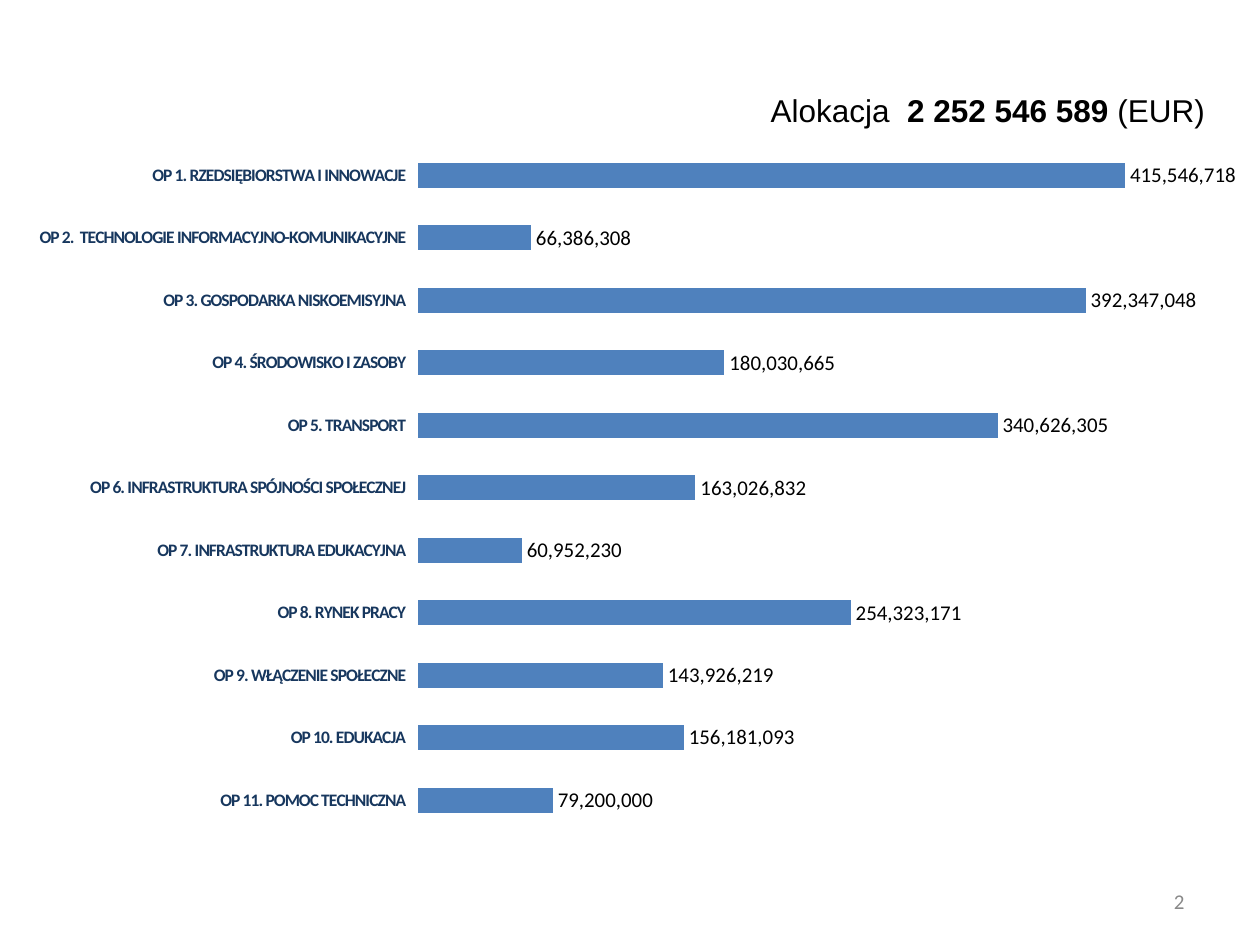
"""Build a slide with a bar chart of the allocation per priority axis."""
from typing import NamedTuple

from pptx import Presentation
from pptx.chart.data import CategoryChartData
from pptx.dml.color import RGBColor
from pptx.enum.chart import XL_CHART_TYPE, XL_LABEL_POSITION, XL_TICK_MARK
from pptx.enum.text import MSO_ANCHOR, PP_ALIGN
from pptx.oxml import parse_xml
from pptx.oxml.ns import nsdecls
from pptx.util import Inches, Pt

BLACK = RGBColor(0x00, 0x00, 0x00)
NAVY = RGBColor(0x17, 0x37, 0x5E)
BLUE = RGBColor(0x4F, 0x81, 0xBD)
GREY = RGBColor(0x89, 0x89, 0x89)


class Allocation(NamedTuple):
    priority: str
    euros: int


class Piece(NamedTuple):
    words: str
    bold: bool = False


class Caption(NamedTuple):
    left: float
    top: float
    width: float
    height: float
    pieces: list[Piece]
    font: str
    size: int
    color: RGBColor
    anchor: MSO_ANCHOR


ALLOCATIONS = [
    Allocation("OP 1. RZEDSIĘBIORSTWA I INNOWACJE", 415546718),
    Allocation("OP 2.  TECHNOLOGIE INFORMACYJNO-KOMUNIKACYJNE", 66386308),
    Allocation("OP 3. GOSPODARKA NISKOEMISYJNA", 392347048),
    Allocation("OP 4. ŚRODOWISKO I ZASOBY", 180030665),
    Allocation("OP 5. TRANSPORT", 340626305),
    Allocation("OP 6. INFRASTRUKTURA SPÓJNOŚCI SPOŁECZNEJ", 163026832),
    Allocation("OP 7. INFRASTRUKTURA EDUKACYJNA", 60952230),
    Allocation("OP 8. RYNEK PRACY", 254323171),
    Allocation("OP 9. WŁĄCZENIE SPOŁECZNE", 143926219),
    Allocation("OP 10. EDUKACJA", 156181093),
    Allocation("OP 11. POMOC TECHNICZNA", 79200000),
]
TOTAL = Caption(
    5.87, 0.67, 3.86, 0.4,
    [Piece("Alokacja  "), Piece("2 252 546 589 ", True), Piece("(EUR) ")],
    "Arial", 18, BLACK, MSO_ANCHOR.TOP,
)
PAGE_NUMBER = Caption(
    7.17, 6.95, 2.33, 0.4, [Piece("2")], "Calibri", 12, GREY, MSO_ANCHOR.MIDDLE
)


def style_font(font, size: int, color: RGBColor, name: str, bold: bool = False) -> None:
    font.size = Pt(size)
    font.name = name
    font.bold = bold
    font.color.rgb = color


def add_caption(slide, caption: Caption) -> None:
    box = slide.shapes.add_textbox(
        Inches(caption.left), Inches(caption.top),
        Inches(caption.width), Inches(caption.height),
    )
    frame = box.text_frame
    frame.word_wrap = True
    frame.vertical_anchor = caption.anchor
    paragraph = frame.paragraphs[0]
    paragraph.alignment = PP_ALIGN.RIGHT
    for piece in caption.pieces:
        run = paragraph.add_run()
        run.text = piece.words
        style_font(run.font, caption.size, caption.color, caption.font, piece.bold)


def place_plot(chart, left: float, top: float, width: float, height: float) -> None:
    plot_area = chart.plots[0]._element.getparent()
    for layout in plot_area.xpath("c:layout"):
        plot_area.remove(layout)
    plot_area.insert(0, parse_xml(
        f'<c:layout {nsdecls("c")}><c:manualLayout><c:layoutTarget val="inner"/>'
        '<c:xMode val="edge"/><c:yMode val="edge"/>'
        f'<c:x val="{left}"/><c:y val="{top}"/><c:w val="{width}"/><c:h val="{height}"/>'
        '</c:manualLayout></c:layout>'
    ))


def add_allocation_chart(slide, allocations: list[Allocation]) -> None:
    data = CategoryChartData(number_format="#,##0")
    data.categories = [item.priority for item in allocations]
    data.add_series("Series 1", [item.euros for item in allocations])
    chart = slide.shapes.add_chart(
        XL_CHART_TYPE.BAR_CLUSTERED,
        Inches(0.28), Inches(0.67), Inches(9.53), Inches(5.93), data,
    ).chart
    chart.has_legend = False
    chart.has_title = False
    style_font(chart.font, 10, BLACK, "Calibri")
    place_plot(chart, 0.32, 0.08, 0.64, 0.92)

    priorities = chart.category_axis
    priorities.reverse_order = True
    priorities.major_tick_mark = XL_TICK_MARK.OUTSIDE
    priorities.format.line.fill.background()
    style_font(priorities.tick_labels.font, 10, NAVY, "Calibri", True)
    for properties in priorities._element.xpath("c:txPr//a:defRPr"):
        properties.set("spc", "-40")

    euros = chart.value_axis
    euros.minimum_scale = 0
    euros.maximum_scale = 450_000_000
    euros.has_major_gridlines = False
    euros.visible = False

    bars = chart.plots[0]
    bars.gap_width = 150
    bars.vary_by_categories = False
    fill = bars.series[0].format.fill
    fill.solid()
    fill.fore_color.rgb = BLUE
    bars.has_data_labels = True
    amounts = bars.data_labels
    amounts.show_value = True
    amounts.number_format = "#,##0"
    amounts.number_format_is_linked = False
    amounts.position = XL_LABEL_POSITION.OUTSIDE_END
    style_font(amounts.font, 12, BLACK, "Calibri")


def main() -> None:
    presentation = Presentation()
    presentation.slide_width = Inches(10)
    presentation.slide_height = Inches(7.5)
    slide = presentation.slides.add_slide(presentation.slide_layouts[6])
    add_caption(slide, TOTAL)
    add_allocation_chart(slide, ALLOCATIONS)
    add_caption(slide, PAGE_NUMBER)
    presentation.save("out.pptx")


if __name__ == "__main__":
    main()
